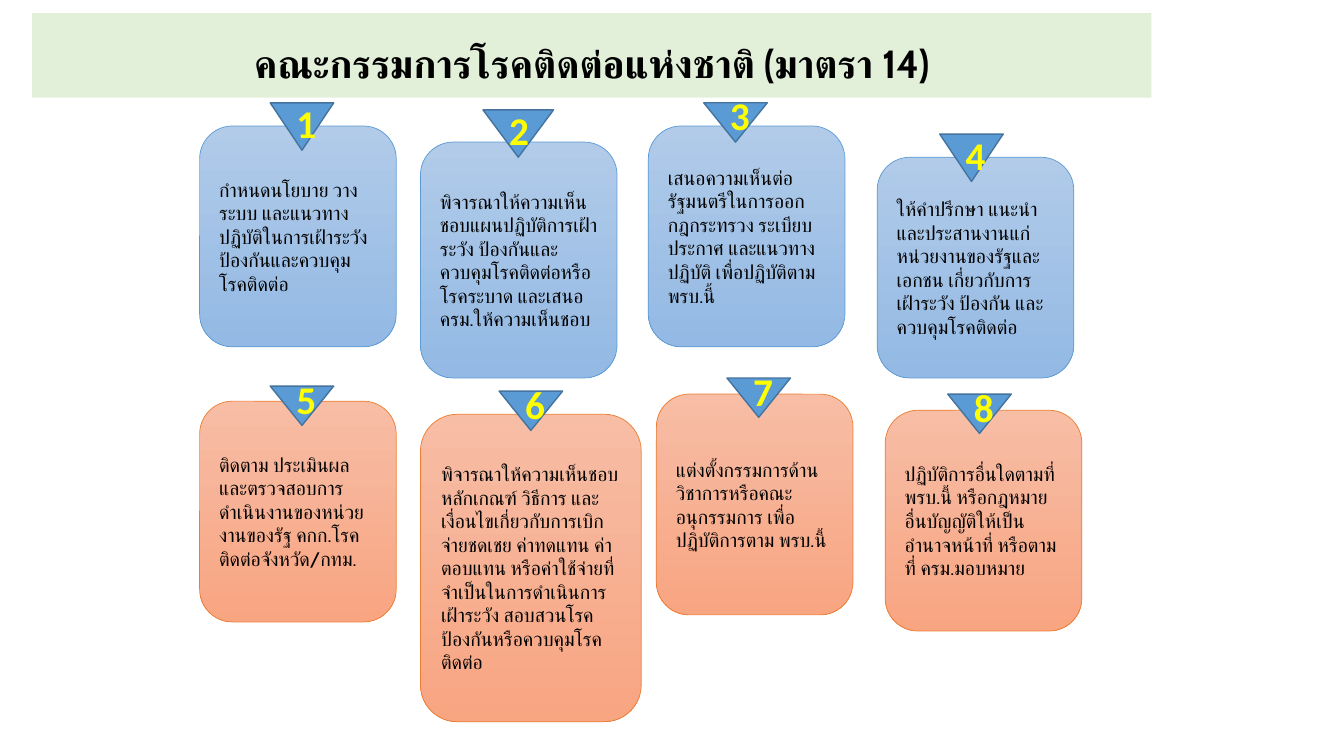
from lxml.etree import SubElement
from pptx import Presentation
from pptx.dml.color import RGBColor
from pptx.enum.lang import MSO_LANGUAGE_ID as LANGUAGE
from pptx.enum.shapes import MSO_SHAPE as SHAPE
from pptx.enum.text import MSO_ANCHOR as ANCHOR, MSO_AUTO_SIZE as AUTO_SIZE, PP_ALIGN as ALIGN
from pptx.oxml.ns import qn
from pptx.util import Pt

PX = 9144  # 100 px to the inch
COLORS = {
    "banner": "E2F0D9", "text": "000000", "number": "FFFF00",
    "marker": "5B9BD5", "marker_line": "43739E",
    "blue_top": "B1CBE9", "blue_bottom": "93B9E4", "blue_line": "5B9BD5",
    "orange_top": "F7BDA5", "orange_bottom": "F8A582", "orange_line": "ED7D31",
}
MARKER_WIDTH = 63
NUMBER_WIDTH, NUMBER_HEIGHT = 35, 57

# tone, box (left, top, width, height), marker (left, top, width, height), text
DUTIES = [
    ("blue", (198, 125, 195, 219), (268, 102, MARKER_WIDTH, 47),
     "กำหนดนโยบาย วางระบบ และแนวทางปฏิบัติในการเฝ้าระวัง ป้องกันและควบคุมโรคติดต่อ"),
    ("blue", (417, 141, 195, 234), (479, 109, 70, 47),
     "พิจารณาให้ความเห็นชอบแผนปฏิบัติการเฝ้าระวัง ป้องกันและควบคุมโรคติดต่อหรือโรคระบาด "
     "และเสนอ ครม.ให้ความเห็นชอบ"),
    ("blue", (643, 125, 195, 219), (698, 102, MARKER_WIDTH, 39),
     "เสนอความเห็นต่อรัฐมนตรีในการออกกฎกระทรวง ระเบียบ ประกาศ และแนวทางปฏิบัติ "
     "เพื่อปฏิบัติตาม พรบ.นี้"),
    ("blue", (870, 156, 195, 219), (932, 133, MARKER_WIDTH, 47),
     "ให้คำปรึกษา แนะนำ และประสานงานแก่หน่วยงานของรัฐและเอกชน "
     "เกี่ยวกับการเฝ้าระวัง ป้องกัน และควบคุมโรคติดต่อ"),
    ("orange", (198, 398, 195, 219), (268, 383, MARKER_WIDTH, 39),
     "ติดตาม ประเมินผล และตรวจสอบการดำเนินงานของหน่วยงานของรัฐ คกก.โรคติดต่อจังหวัด/กทม."),
    ("orange", (417, 411, 219, 305), (495, 388, MARKER_WIDTH, 39),
     "พิจารณาให้ความเห็นชอบหลักเกณฑ์ วิธีการ และเงื่อนไขเกี่ยวกับการเบิกจ่ายชดเชย "
     "ค่าทดแทน ค่าตอบแทน หรือค่าใช้จ่ายที่จำเป็นในการดำเนินการเฝ้าระวัง "
     "สอบสวนโรค ป้องกันหรือควบคุมโรคติดต่อ"),
    ("orange", (651, 391, 195, 219), (721, 375, MARKER_WIDTH, 39),
     "แต่งตั้งกรรมการด้านวิชาการหรือคณะอนุกรรมการ เพื่อปฏิบัติการตาม พรบ.นี้"),
    ("orange", (878, 407, 195, 219), (940, 391, MARKER_WIDTH, 39),
     "ปฏิบัติการอื่นใดตามที่ พรบ.นี้ หรือกฎหมายอื่นบัญญัติให้เป็นอำนาจหน้าที่ "
     "หรือตามที่ ครม.มอบหมาย"),
]


def add_outline(kind, place, line=None, weight=1):
    shape = slide.shapes.add_shape(kind, *(length * PX for length in place))
    shape.shadow.inherit = False
    if line:
        shape.line.color.rgb = RGBColor.from_string(COLORS[line])
        shape.line.width = Pt(weight)
    else:
        shape.line.fill.background()
    return shape


def write(frame, text, size, color="text", face="Cabin", bold=False, align=ALIGN.LEFT):
    """Put one run in the frame, with the same face for Latin and Thai letters."""
    paragraph = frame.paragraphs[0]
    paragraph.alignment = align
    run = paragraph.add_run()
    run.text = text
    run.font.size = Pt(size)
    run.font.bold = bold
    run.font.name = face
    run.font.language_id = LANGUAGE.THAI
    run.font.color.rgb = RGBColor.from_string(COLORS[color])
    SubElement(run.font._element, qn("a:cs"), typeface=face)


prs = Presentation()
prs.slide_width, prs.slide_height = 1333 * PX, 750 * PX
slide = prs.slides.add_slide(prs.slide_layouts[6])

banner = add_outline(SHAPE.RECTANGLE, (32, 13, 1110, 84))
banner.fill.solid()
banner.fill.fore_color.rgb = RGBColor.from_string(COLORS["banner"])
banner.text_frame.vertical_anchor = ANCHOR.MIDDLE
banner.text_frame.margin_top = 20 * PX
write(banner.text_frame, "คณะกรรมการโรคติดต่อแห่งชาติ (มาตรา 14)", 28, bold=True, align=ALIGN.CENTER)

for number, (tone, box_place, marker_place, duty) in enumerate(DUTIES, start=1):
    box = add_outline(SHAPE.ROUNDED_RECTANGLE, box_place, f"{tone}_line", 0.5)
    box.fill.gradient()
    box.fill.gradient_angle = 270
    for stop, end in zip(box.fill.gradient_stops, ("top", "bottom")):
        stop.color.rgb = RGBColor.from_string(COLORS[f"{tone}_{end}"])
    box.text_frame.word_wrap = True
    box.text_frame.vertical_anchor = ANCHOR.MIDDLE
    write(box.text_frame, duty, 14)

    marker = add_outline(SHAPE.ISOSCELES_TRIANGLE, marker_place, "marker_line")
    marker.rotation = 180
    marker.fill.solid()
    marker.fill.fore_color.rgb = RGBColor.from_string(COLORS["marker"])

    left, top, _, height = marker_place
    number_top = top + height + 2 - NUMBER_HEIGHT
    label = slide.shapes.add_textbox((left + 16) * PX, number_top * PX,
                                     NUMBER_WIDTH * PX, NUMBER_HEIGHT * PX).text_frame
    label.word_wrap = False
    label.auto_size = AUTO_SIZE.SHAPE_TO_FIT_TEXT
    write(label, str(number), 28, "number", "Calibri", bold=True)

prs.save("out.pptx")
